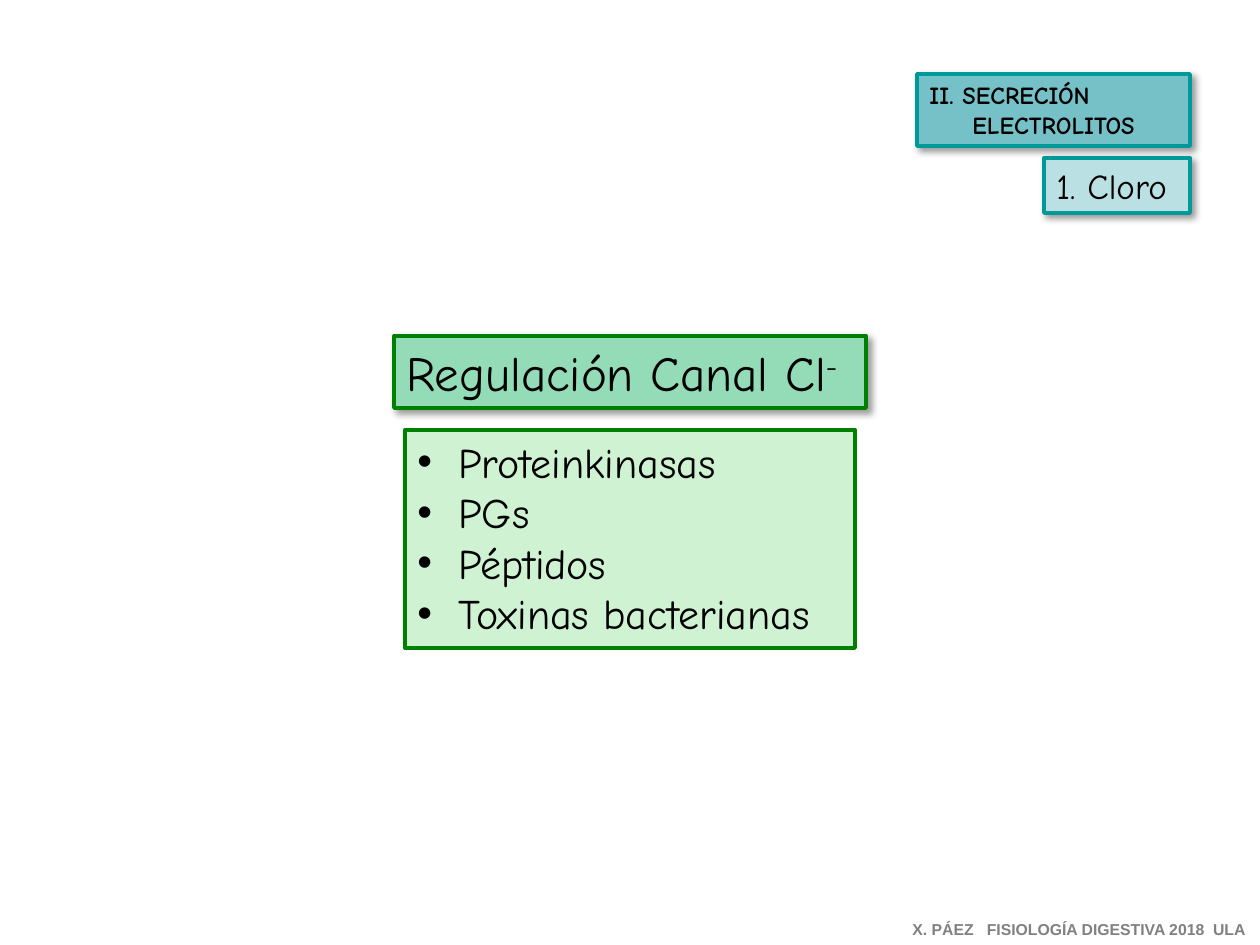
from lxml import etree
from pptx import Presentation
from pptx.dml.color import RGBColor
from pptx.enum.shapes import MSO_SHAPE
from pptx.enum.text import MSO_ANCHOR, PP_ALIGN
from pptx.oxml import parse_xml
from pptx.oxml.ns import qn
from pptx.util import Pt

PX = 914400 / 126
NAMESPACE = "http://schemas.openxmlformats.org/drawingml/2006/main"

# Content: position in px, colours, and lines as (text, left indent in px)
BOXES = [
    dict(at=(394, 336, 472, 72), fill="94DCB8", line="008000", size=28, shadow=True,
         lines=[("Regulación Canal Cl", 0)], superscript="-"),
    dict(at=(405, 430, 450, 218), fill="CEF2D2", line="008000", size=24, bullet="•",
         lines=[(text, 41) for text in
                ("Proteinkinasas", "PGs", "Péptidos", "Toxinas bacterianas")]),
    dict(at=(917, 74, 273, 72), fill="75C1C7", line="009999", size=14, shadow=True,
         bold=True, lines=[("II. SECRECIÓN", 0), ("ELECTROLITOS", 43)]),
    dict(at=(1044, 158, 146, 55), fill="BBE0E3", line="009999", size=20, shadow=True,
         lines=[("1. Cloro", 0)]),
]
FOOTER = "X. PÁEZ   FISIOLOGÍA DIGESTIVA 2018  ULA"
FOOTER_AT = (900, 914, 360, 31)


def px(value):
    return round(value * PX)


def color(value):
    return RGBColor.from_string(value)


def format_run(run, size, font_name, font_color, bold=False):
    run.font.size = Pt(size)
    run.font.name = font_name
    run.font.bold = bold
    run.font.color.rgb = color(font_color)


def add_shadow(shape):
    effects = shape._element.spPr.find(qn("a:effectLst"))
    effects.append(parse_xml(
        f'<a:outerShdw xmlns:a="{NAMESPACE}" blurRad="{Pt(4)}" dist="{Pt(3)}" '
        'dir="2700000" algn="tl" rotWithShape="0"><a:srgbClr val="000000">'
        '<a:alpha val="40000"/></a:srgbClr></a:outerShdw>'))


def set_indent(paragraph, indent, bullet):
    properties = paragraph._p.get_or_add_pPr()
    properties.set("marL", str(px(indent)))
    if bullet:
        properties.set("indent", str(-px(indent)))
        font = etree.SubElement(properties, qn("a:buFont"))
        font.set("typeface", "Arial")
        etree.SubElement(properties, qn("a:buChar")).set("char", bullet)


def add_box(slide, box):
    shape = slide.shapes.add_shape(MSO_SHAPE.RECTANGLE, *map(px, box["at"]))
    shape.shadow.inherit = False
    shape.fill.solid()
    shape.fill.fore_color.rgb = color(box["fill"])
    shape.line.color.rgb = color(box["line"])
    shape.line.width = Pt(2.25)
    if box.get("shadow"):
        add_shadow(shape)

    text_frame = shape.text_frame
    text_frame.word_wrap = True
    text_frame.vertical_anchor = MSO_ANCHOR.TOP
    text_frame.text = "\n".join(text for text, _ in box["lines"])
    for paragraph, (_, indent) in zip(text_frame.paragraphs, box["lines"]):
        paragraph.alignment = PP_ALIGN.LEFT
        set_indent(paragraph, indent, box.get("bullet"))
        if "superscript" in box:
            run = paragraph.add_run()
            run.text = box["superscript"]
            run.font._element.set("baseline", "30000")
        for run in paragraph.runs:
            format_run(run, box["size"], "Comic Neue", "000000", box.get("bold", False))


def add_footer(slide):
    text_frame = slide.shapes.add_textbox(*map(px, FOOTER_AT)).text_frame
    text_frame.word_wrap = False
    text_frame.text = FOOTER
    format_run(text_frame.paragraphs[0].runs[0], 9, "Arial", "808080", bold=True)


def main():
    presentation = Presentation()
    presentation.slide_width, presentation.slide_height = px(1260), px(945)
    slide = presentation.slides.add_slide(presentation.slide_layouts[6])
    for box in BOXES:
        add_box(slide, box)
    add_footer(slide)
    presentation.save("out.pptx")


if __name__ == "__main__":
    main()
